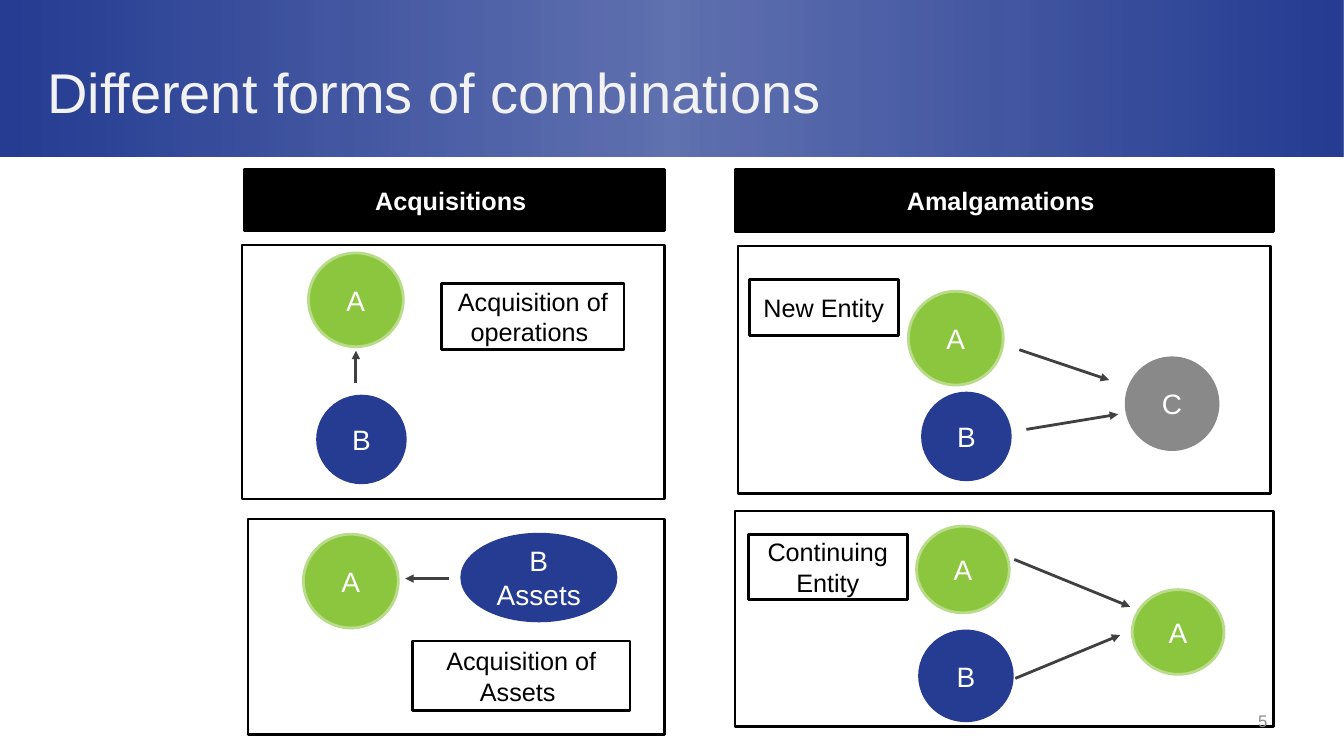
from lxml import etree
from pptx import Presentation
from pptx.dml.color import RGBColor
from pptx.enum.shapes import MSO_CONNECTOR, MSO_SHAPE
from pptx.enum.text import MSO_ANCHOR, PP_ALIGN
from pptx.oxml.ns import qn
from pptx.util import Pt

PX = 9144
RECT, OVAL = MSO_SHAPE.RECTANGLE, MSO_SHAPE.OVAL
LINE = MSO_CONNECTOR.STRAIGHT
MID = MSO_ANCHOR.MIDDLE
LEFT, MIDST, RIGHT = PP_ALIGN.LEFT, PP_ALIGN.CENTER, PP_ALIGN.RIGHT

NAVY, BLACK, WHITE, GREY = "253C92", "000000", "FFFFFF", "404040"
NODE = {"A": ("8CC63F", "B8DC88"), "B": (NAVY, NAVY), "C": ("898989", "898989")}
HEAD = {"size": Pt(18), "bold": True}
BODY = {"size": Pt(18)}
MARK = {"size": Pt(20)}

HEADS = [
    ("Acquisitions ", (242, 168, 417, 61)),
    ("Amalgamations ", (729, 168, 534, 62)),
]
PANELS = [
    {"box": (240, 243, 419, 252),
     "label": ("Acquisition of operations ", (198, 38, 181, 66)),
     "nodes": [("A", (66, 8, 94, 93)), ("B", (75, 150, 87, 86))],
     "links": [(113, 137, 113, 105)]},
    {"box": (246, 515, 413, 214),
     "label": ("Acquisition of Assets ", (163, 121, 216, 69)),
     "nodes": [("A", (55, 15, 94, 93)), ("B\nAssets", (212, 15, 153, 86))],
     "links": [(199, 59, 156, 59)]},
    {"box": (732, 244, 528, 246),
     "label": ("New Entity", (11, 33, 148, 56)),
     "nodes": [("A", (169, 45, 94, 93)), ("B", (183, 146, 87, 86)),
               ("C", (385, 111, 91, 91))],
     "links": [(279, 103, 368, 133), (286, 182, 377, 167)]},
    {"box": (729, 507, 534, 214),
     "label": ("Continuing Entity", (13, 23, 158, 65)),
     "nodes": [("A", (180, 15, 92, 86)), ("B", (183, 119, 92, 89)),
               ("A", (394, 78, 91, 84))],
     "links": [(277, 48, 392, 95), (278, 166, 382, 123)]},
]


def rgb(code):
    """Turn a hex string into a colour."""
    return RGBColor.from_string(code)


def emu(box):
    """Scale px lengths to EMU."""
    return [n * PX for n in box]


def shift(box, x, y):
    """Move a box by an offset."""
    return (box[0] + x, box[1] + y, *box[2:])


def write(shape, text, color, style, align=MIDST):
    """Fill a shape with styled text."""
    frame = shape.text_frame
    frame.word_wrap = True
    frame.vertical_anchor = MID
    frame.text = text
    for para in frame.paragraphs:
        para.alignment = align
        para.font.name = "Arial"
        para.font.color.rgb = rgb(color)
        for key, value in style.items():
            setattr(para.font, key, value)


def draw(slide, kind, box, fill, edge):
    """Add a shape with a fill and an edge."""
    shape = slide.shapes.add_shape(kind, *emu(box))
    shape.shadow.inherit = False
    if fill:
        shape.fill.solid()
        shape.fill.fore_color.rgb = rgb(fill)
    else:
        shape.fill.background()
    shape.line.color.rgb = rgb(edge)
    shape.line.width = Pt(2)
    return shape


def arrow(slide, ends):
    """Add an arrow between two points."""
    link = slide.shapes.add_connector(LINE, *emu(ends))
    link.line.color.rgb = rgb(GREY)
    link.line.width = Pt(2)
    etree.SubElement(link.line._get_or_add_ln(), qn("a:tailEnd"), type="triangle")
    etree.SubElement(link._element.spPr, qn("a:effectLst"))


def note(slide, box, text, color, size, align):
    """Add a plain text box."""
    shape = slide.shapes.add_textbox(*emu(box))
    write(shape, text, color, {"size": Pt(size)}, align)


def banner(slide, box):
    """Draw the shaded title band."""
    x, y, w, h = box
    band = slide.shapes.add_shape(RECT, *emu(box))
    band.shadow.inherit = False
    band.line.fill.background()
    band.fill.gradient()
    band.fill.gradient_angle = 0
    stops = band._element.spPr.find(qn("a:gradFill")).find(qn("a:gsLst"))
    for stop in list(stops):
        stops.remove(stop)
    for pos, alpha in ((0, 100), (50, 72), (100, 100)):
        stop = etree.SubElement(stops, qn("a:gs"), pos=str(pos * 1000))
        tint = etree.SubElement(stop, qn("a:srgbClr"), val=NAVY)
        etree.SubElement(tint, qn("a:alpha"), val=str(alpha * 1000))
    note(slide, (x + 37, y + 28, 1200, h - 30),
         "Different forms of combinations", "F2F2F2", 40, LEFT)


def header(slide, text, box):
    """Draw a black column header."""
    write(draw(slide, RECT, box, BLACK, BLACK), text, WHITE, HEAD)


def panel(slide, box, label, nodes, links):
    """Draw a framed diagram with its label, nodes and arrows."""
    x, y = box[:2]
    draw(slide, RECT, box, None, BLACK)
    for text, spot in nodes:
        fill, edge = NODE[text[0]]
        write(draw(slide, OVAL, shift(spot, x, y), fill, edge), text, WHITE, MARK)
    for x1, y1, x2, y2 in links:
        arrow(slide, (x + x1, y + y1, x + x2, y + y2))
    text, spot = label
    write(draw(slide, RECT, shift(spot, x, y), WHITE, BLACK), text, BLACK, BODY)


def main():
    """Build and save the slide."""
    deck = Presentation()
    deck.slide_width, deck.slide_height = emu((1333, 750))
    slide = deck.slides.add_slide(deck.slide_layouts[6])
    banner(slide, (0, 0, 1333, 155))
    for text, box in HEADS:
        header(slide, text, box)
    for part in PANELS:
        panel(slide, **part)
    note(slide, (956, 695, 311, 40), "5", "8C8C8C", 12, RIGHT)
    deck.save("out.pptx")


if __name__ == "__main__":
    main()
